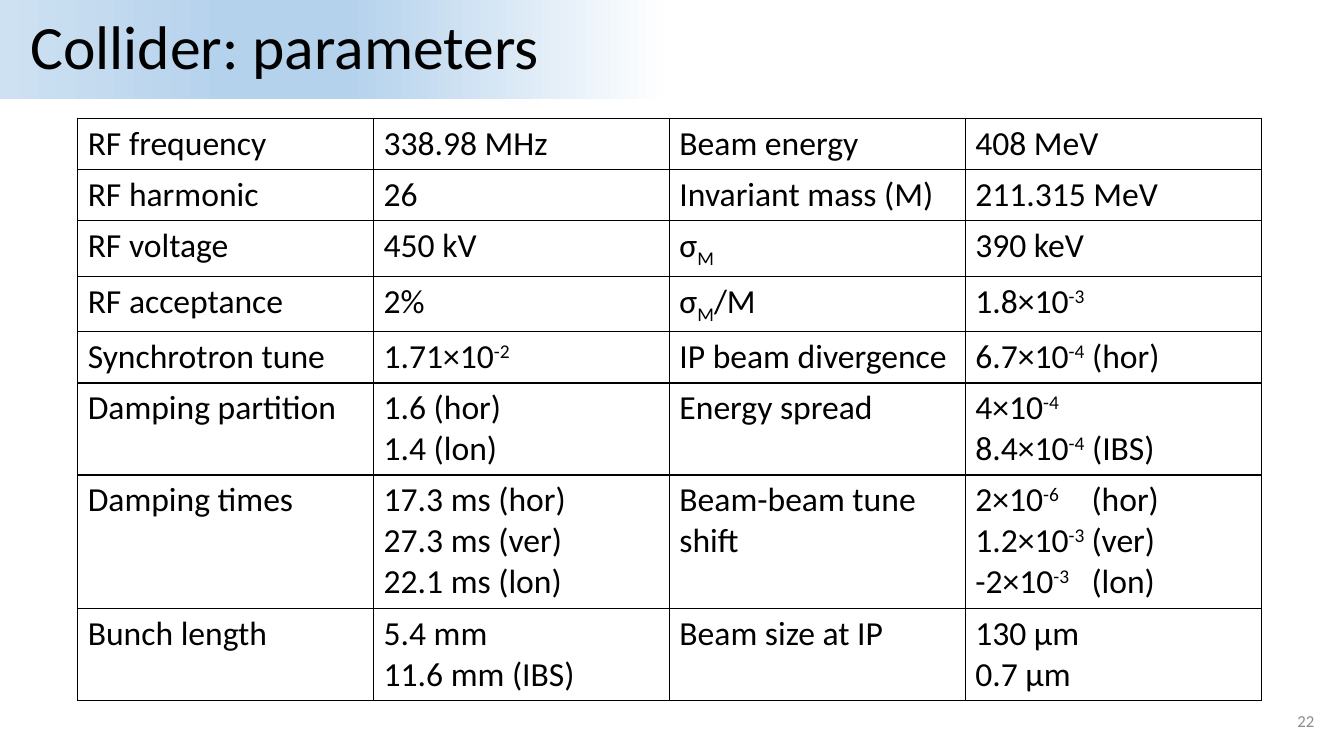
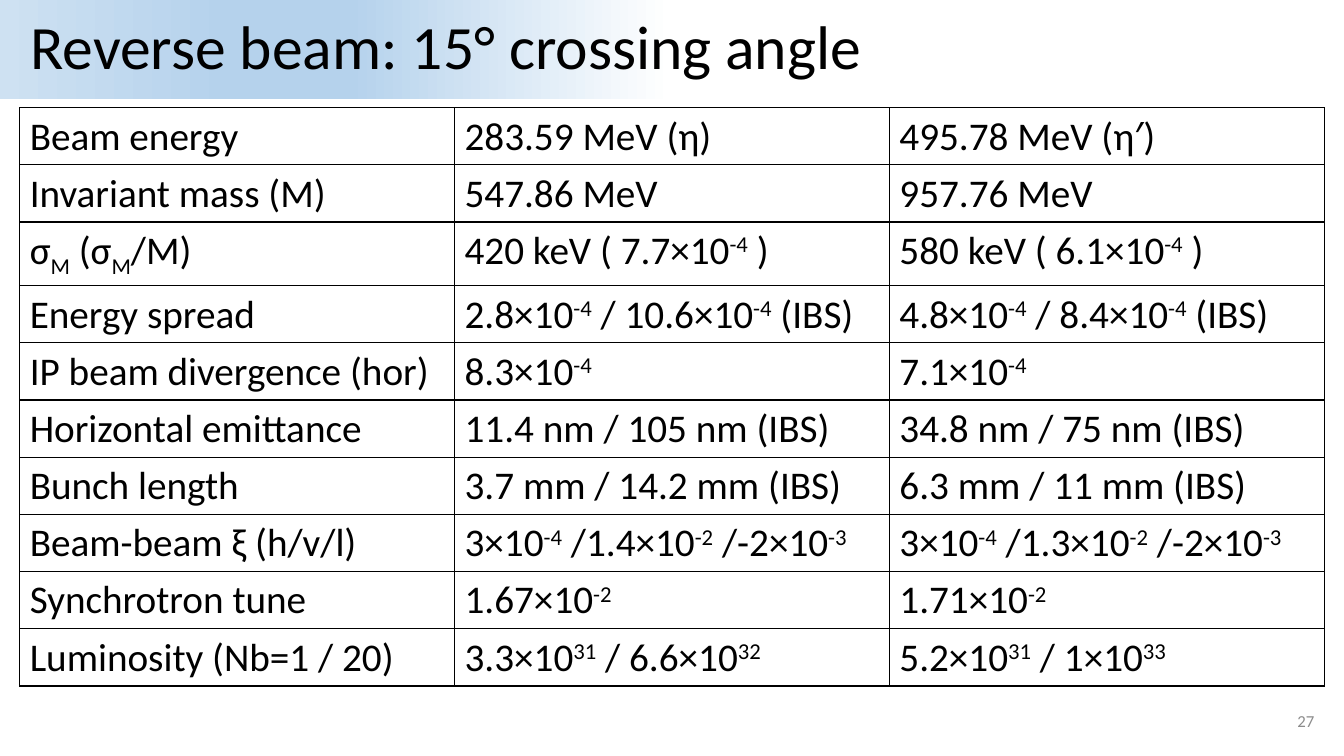
from dataclasses import dataclass
import copy

import pptx
import pptx.dml.color
import pptx.enum.shapes
import pptx.enum.text
import pptx.oxml
import pptx.oxml.ns
import pptx.util
from lxml import etree

Pt = pptx.util.Pt
qn = pptx.oxml.ns.qn
COLORS = {
    "text": "000000",
    "muted": "8C8C8C",
    "white": "FFFFFF",
    "band": "B5D2EC",
    "band_edge": "CEE1F2",
}
FONT = "Calibri"
PAGE_WIDTH, PAGE_HEIGHT = 960, 540
TITLE_HEIGHT = 70.6
ROW_HEIGHT = 29.5
BAND_STOPS = [(50, "white"), (74, "band"), (83, "band"), (100, "band_edge")]
TAB_POSITION = 83
SUPERSCRIPT, SUBSCRIPT = 30000, -25000


@dataclass
class TableSlide:
    title: str
    number: int
    left: float
    top: float
    width: float
    height: float
    font_size: float
    rows: list[list[str]]


# In cell texts, ^...^ is superscript, ~...~ is subscript
PAGES = [
    TableSlide("Collider: parameters", 22, 55.5, 84.5, 845.4, 403.2, 24, [
        ["RF frequency", "338.98 MHz", "Beam energy", "408 MeV"],
        ["RF harmonic", "26", "Invariant mass (M)", "211.315 MeV"],
        ["RF voltage", "450 kV", "σ~M~", "390 keV"],
        ["RF acceptance", "2%", "σ~M~/M", "1.8×10^-3^"],
        ["Synchrotron tune", "1.71×10^-2^", "IP beam divergence", "6.7×10^-4^ (hor)"],
        ["Damping partition", "1.6 (hor)\n1.4 (lon)", "Energy spread", "4×10^-4^\n8.4×10^-4^ (IBS)"],
        ["Damping times", "17.3 ms (hor)\n27.3 ms (ver)\n22.1 ms (lon)",
         "Beam-beam tune shift", "2×10^-6^\t(hor)\n1.2×10^-3^\t(ver)\n-2×10^-3^\t(lon)"],
        ["Bunch length", "5.4 mm\n11.6 mm (IBS)", "Beam size at IP", "130 μm\n0.7 μm"],
    ]),
    TableSlide("Reverse beam: 15° crossing angle", 27, 14.1, 76.9, 931.8, 408.2, 28, [
        ["Beam energy", "283.59 MeV (η)", "495.78 MeV (η′)"],
        ["Invariant mass (M)", "547.86 MeV", "957.76 MeV"],
        ["σ~M~ (σ~M~/M)", "420 keV ( 7.7×10^-4^ )", "580 keV ( 6.1×10^-4^ )"],
        ["Energy spread", "2.8×10^-4^ / 10.6×10^-4^ (IBS)", "4.8×10^-4^ / 8.4×10^-4^ (IBS)"],
        ["IP beam divergence (hor)", "8.3×10^-4^", "7.1×10^-4^"],
        ["Horizontal emittance", "11.4 nm / 105 nm (IBS)", "34.8 nm / 75 nm (IBS)"],
        ["Bunch length", "3.7 mm / 14.2 mm (IBS)", "6.3 mm / 11 mm (IBS)"],
        ["Beam-beam ξ (h/v/l)", "3×10^-4^ /1.4×10^-2^ /-2×10^-3^", "3×10^-4^ /1.3×10^-2^ /-2×10^-3^"],
        ["Synchrotron tune", "1.67×10^-2^", "1.71×10^-2^"],
        ["Luminosity (Nb=1 / 20)", "3.3×10^31^ / 6.6×10^32^", "5.2×10^31^ / 1×10^33^"],
    ]),
]


def rgb(name: str) -> pptx.dml.color.RGBColor:
    return pptx.dml.color.RGBColor.from_string(COLORS[name])


def add_span(para, text: str, size: float, color: str = "text", baseline: int = 0) -> None:
    span = para.add_run()
    span.text = text
    span.font.name = FONT
    span.font.size = Pt(size)
    span.font.color.rgb = rgb(color)
    if baseline:
        span.font._element.set("baseline", str(baseline))


def add_marked_text(para, text: str, size: float) -> None:
    for outer, piece in enumerate(text.split("^")):
        for inner, part in enumerate(piece.split("~")):
            baseline = SUPERSCRIPT if outer % 2 else SUBSCRIPT if inner % 2 else 0
            if part:
                add_span(para, part, size, baseline=baseline)


def add_tab_stop(para, position: float) -> None:
    tabs = etree.SubElement(para._p.get_or_add_pPr(), qn("a:tabLst"))
    etree.SubElement(tabs, qn("a:tab"), pos=str(Pt(position)), algn="l")


def fill_band(fill) -> None:
    fill.gradient()
    fill.gradient_angle = 180
    stop_list = fill._xPr.find(qn("a:gradFill")).find(qn("a:gsLst"))
    for stop in list(stop_list)[1:]:
        stop_list.remove(stop)
    for _ in BAND_STOPS[1:]:
        stop_list.append(copy.deepcopy(stop_list[0]))
    for stop, (position, color) in zip(fill.gradient_stops, BAND_STOPS):
        stop.position = position / 100
        stop.color.rgb = rgb(color)


def add_title(page, text: str) -> None:
    box = page.shapes.add_shape(pptx.enum.shapes.MSO_SHAPE.RECTANGLE, 0, 0, Pt(PAGE_WIDTH), Pt(TITLE_HEIGHT))
    box.shadow.inherit = False
    box.line.fill.background()
    fill_band(box.fill)
    frame = box.text_frame
    frame.word_wrap = True
    frame.margin_left = Pt(21.6)
    frame.vertical_anchor = pptx.enum.text.MSO_ANCHOR.MIDDLE
    para = frame.paragraphs[0]
    para.alignment = pptx.enum.text.PP_ALIGN.LEFT
    para.line_spacing = 0.9
    add_span(para, text, 44)


def add_page_number(page, number: int) -> None:
    box = page.shapes.add_textbox(Pt(730), Pt(500.4), Pt(216), Pt(28.8))
    frame = box.text_frame
    frame.word_wrap = True
    frame.vertical_anchor = pptx.enum.text.MSO_ANCHOR.MIDDLE
    para = frame.paragraphs[0]
    para.alignment = pptx.enum.text.PP_ALIGN.RIGHT
    add_span(para, str(number), 12, "muted")


def add_borders(cell) -> None:
    properties = cell._tc.get_or_add_tcPr()
    for side in ("lnL", "lnR", "lnT", "lnB"):
        line = etree.SubElement(properties, qn(f"a:{side}"), w=str(Pt(1)))
        solid = etree.SubElement(line, qn("a:solidFill"))
        etree.SubElement(solid, qn("a:srgbClr"), val=COLORS["text"])


def fill_cell(cell, text: str, size: float) -> None:
    add_borders(cell)
    cell.fill.background()
    frame = cell.text_frame
    for index, line in enumerate(text.split("\n")):
        para = frame.add_paragraph() if index else frame.paragraphs[0]
        if "\t" in line:
            add_tab_stop(para, TAB_POSITION)
        add_marked_text(para, line, size)


def add_parameter_table(page, content: TableSlide) -> None:
    graphic = page.shapes.add_table(
        len(content.rows), len(content.rows[0]),
        Pt(content.left), Pt(content.top), Pt(content.width), Pt(content.height),
    )
    table = graphic.table
    table.first_row = False
    table.horz_banding = False
    for row, texts in zip(table.rows, content.rows):
        row.height = Pt(ROW_HEIGHT)
        for cell, text in zip(row.cells, texts):
            fill_cell(cell, text, content.font_size)
    graphic.height = Pt(content.height)


def main() -> None:
    deck = pptx.Presentation()
    deck.slide_width, deck.slide_height = Pt(PAGE_WIDTH), Pt(PAGE_HEIGHT)
    for content in PAGES:
        page = deck.slides.add_slide(deck.slide_layouts[6])
        add_title(page, content.title)
        add_parameter_table(page, content)
        add_page_number(page, content.number)
    deck.save("out.pptx")


if __name__ == "__main__":
    main()
